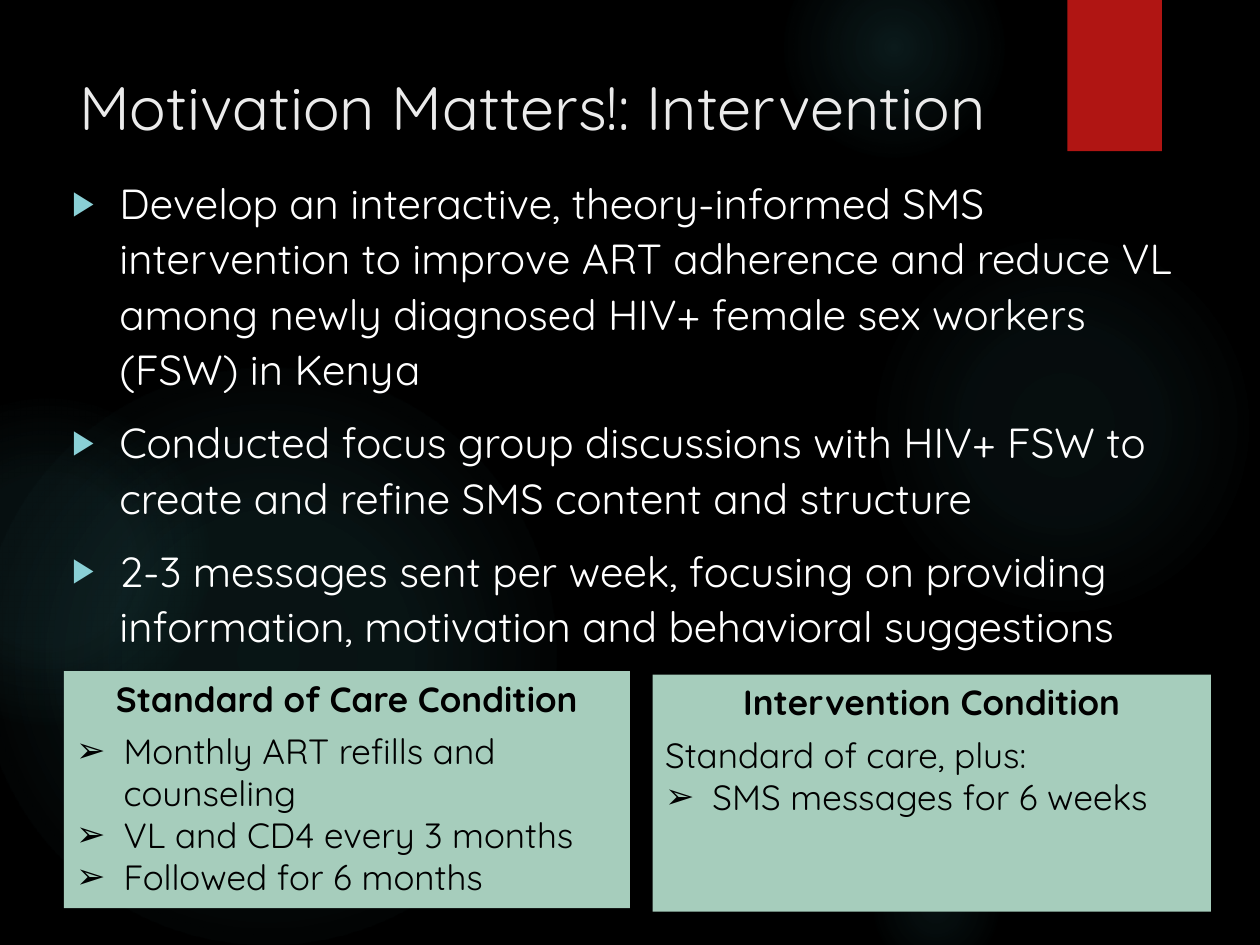
from lxml import etree
from pptx import Presentation
from pptx.dml.color import RGBColor
from pptx.enum import shapes, text
from pptx.oxml import ns
from pptx.util import Pt

BLACK = RGBColor(0x00, 0x00, 0x00)
WHITE = RGBColor(0xFF, 0xFF, 0xFF)
PALE = RGBColor(0xEB, 0xEB, 0xEB)
RED = RGBColor(0xB0, 0x15, 0x13)
TEAL = RGBColor(0x50, 0xB9, 0xC1)
AQUA = RGBColor(0x8A, 0xD0, 0xD6)
SAGE = RGBColor(0xA6, 0xCD, 0xBC)

GLOWS = [
    (496, 132, 222, [(0, 7), (36, 6), (69, 0)]),
    (448, -36, 126, [(0, 14), (36, 7), (73, 0)]),
    (496, 480, 78, [(0, 9), (36, 5), (66, 0)]),
    (-12, 210, 330, [(0, 11), (36, 10), (75, 0)]),
    (-66, 228, 186, [(0, 8), (36, 8), (72, 0)]),
]
AIMS = [
    "Develop an interactive, theory-informed SMS intervention to improve ART adherence "
    "and reduce VL among newly diagnosed HIV+ female sex workers (FSW) in Kenya",
    "Conducted focus group discussions with HIV+ FSW to create and refine SMS content and structure",
    "2-3 messages sent per week, focusing on providing information, motivation and behavioral suggestions",
]


class Deck:
    font = "Quicksand"
    indent = 27

    def __init__(self, width, height):
        self.prs = Presentation()
        self.prs.slide_width, self.prs.slide_height = Pt(width), Pt(height)
        self.s = self.prs.slides.add_slide(self.prs.slide_layouts[1])
        fill = self.s.background.fill
        fill.solid()
        fill.fore_color.rgb = BLACK

    def shape(self, kind, box, color):
        sp = self.s.shapes.add_shape(kind, *map(Pt, box))
        sp.shadow.inherit = False
        sp.fill.solid()
        sp.fill.fore_color.rgb = color
        sp.line.fill.background()
        return sp

    def glow(self, left, top, size, stops):
        sp = self.shape(shapes.MSO_SHAPE.OVAL, (left, top, size, size), TEAL)
        solid = sp._element.spPr.find(ns.qn("a:solidFill"))
        grad = etree.Element(ns.qn("a:gradFill"), rotWithShape="1")
        stop_list = etree.SubElement(grad, ns.qn("a:gsLst"))
        for position, opacity in stops:
            stop = etree.SubElement(stop_list, ns.qn("a:gs"), pos=str(position * 1000))
            color = etree.SubElement(stop, ns.qn("a:srgbClr"), val=str(TEAL))
            etree.SubElement(color, ns.qn("a:alpha"), val=str(opacity * 1000))
        circle = etree.SubElement(grad, ns.qn("a:path"), path="circle")
        etree.SubElement(circle, ns.qn("a:fillToRect"), dict.fromkeys("ltrb", "50000"))
        solid.getparent().replace(solid, grad)

    def placeholder(self, index, box):
        sp = self.s.placeholders[index]
        sp.left, sp.top, sp.width, sp.height = map(Pt, box)
        sp._element.getparent().append(sp._element)
        return self.frame(sp)

    def frame(self, sp):
        tf = sp.text_frame
        for name, value in {
            "word_wrap": True,
            "auto_size": text.MSO_AUTO_SIZE.NONE,
            "vertical_anchor": text.MSO_ANCHOR.TOP,
        }.items():
            setattr(tf, name, value)
        return tf

    def paragraph(self, tf, words, size, color, bold=False, bullet=None, **layout):
        p = tf.paragraphs[0] if not tf.text else tf.add_paragraph()
        layout = {"alignment": text.PP_ALIGN.LEFT, "space_before": Pt(0), **layout}
        for name, value in layout.items():
            setattr(p, name, value)
        if bullet:
            self.bullet(p, *bullet)
        r = p.add_run()
        r.text = words
        for name, value in {"name": self.font, "size": Pt(size), "bold": bold}.items():
            setattr(r.font, name, value)
        r.font.color.rgb = color

    def bullet(self, p, char, color, percent):
        pPr = p._p.get_or_add_pPr()
        pPr.set("marL", str(Pt(self.indent)))
        pPr.set("indent", str(-Pt(self.indent)))
        holder = etree.SubElement(pPr, ns.qn("a:buClr"))
        etree.SubElement(holder, ns.qn("a:srgbClr"), val=str(color))
        etree.SubElement(pPr, ns.qn("a:buSzPct"), val=str(percent * 1000))
        etree.SubElement(pPr, ns.qn("a:buFont"), typeface="Arial")
        etree.SubElement(pPr, ns.qn("a:buChar"), char=char)

    def title(self, box, words):
        self.paragraph(self.placeholder(0, box), words, 35, PALE)

    def body(self, box, items):
        tf = self.placeholder(1, box)
        for i, words in enumerate(items):
            self.paragraph(tf, words, 24, WHITE, bullet=("▶", AQUA, 80),
                           line_spacing=1.1, space_before=Pt(10 if i else 0))

    def condition(self, box, heading, items, intro=None):
        tf = self.frame(self.shape(shapes.MSO_SHAPE.RECTANGLE, box, SAGE))
        self.paragraph(tf, heading, 20, BLACK, bold=True,
                       alignment=text.PP_ALIGN.CENTER, space_after=Pt(6))
        if intro:
            self.paragraph(tf, intro, 20, BLACK)
        for words in items:
            self.paragraph(tf, words, 20, BLACK, bullet=("➢", BLACK, 100))


def main():
    deck = Deck(720, 540)
    for glow in GLOWS:
        deck.glow(*glow)
    deck.shape(shapes.MSO_SHAPE.RECTANGLE, (610, 0, 54, 86.4), RED)
    deck.title((38, 36, 664, 110), "Motivation Matters!: Intervention")
    deck.body((34, 95, 668, 415), AIMS)
    deck.condition((373, 385.5, 319, 135.5), "Intervention Condition",
                   ["SMS messages for 6 weeks"], intro="Standard of care, plus:")
    deck.condition((36.5, 383.5, 323.5, 135.5), "Standard of Care Condition",
                   ["Monthly ART refills and counseling", "VL and CD4 every 3 months",
                    "Followed for 6 months"])
    deck.prs.save("out.pptx")


if __name__ == "__main__":
    main()
